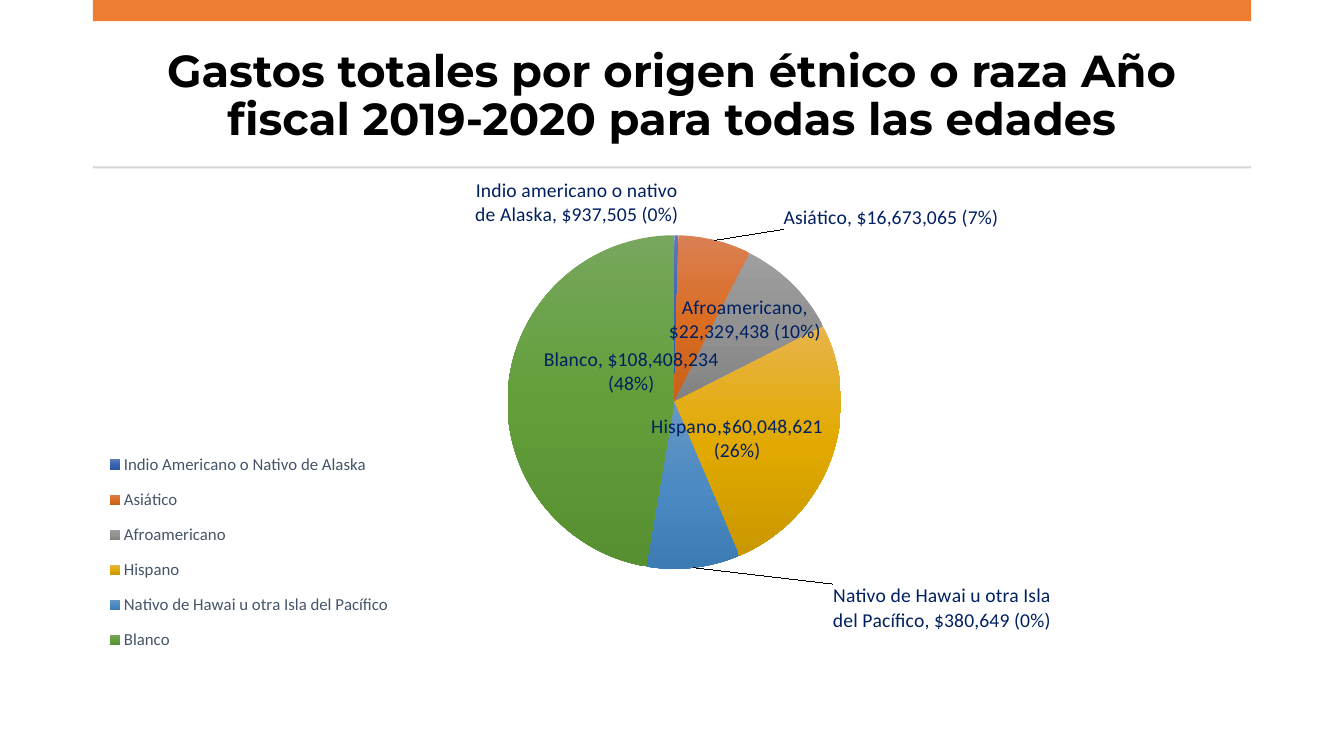
"""Build a slide with a pie chart of total spending by ethnicity or race."""
from dataclasses import dataclass

from pptx import Presentation
from pptx import util as u
from pptx.chart.data import CategoryChartData
from pptx.dml.color import RGBColor
from pptx.enum import chart as charts, shapes, text
from pptx.oxml import parse_xml
from pptx.oxml.ns import nsdecls

BLACK = RGBColor(0x00, 0x00, 0x00)
ORANGE = RGBColor(0xED, 0x7D, 0x31)
GREY = RGBColor(0xD5, 0xD5, 0xD5)
SLATE = RGBColor(0x44, 0x54, 0x6A)
NAVY = RGBColor(0x00, 0x20, 0x60)
LEFT, WIDTH = u.Inches(0.92), u.Inches(11.49)
TITLE = "Gastos totales por origen étnico o raza Año fiscal 2019-2020 para todas las edades"


@dataclass
class Bar:
    top: float
    height: float
    color: RGBColor


@dataclass
class Slice:
    category: str
    share: float
    label: str
    offset: tuple[float, float]
    gradient: tuple[str, str, str]


BARS = [Bar(0, 0.21, ORANGE), Bar(1.65, 0.02, GREY)]
SLICES = [
    Slice("Indio Americano o Nativo de Alaska", 0.4,
          "Indio americano o nativo\nde Alaska, $937,505 (0%)", (-0.086, -0.005),
          ("5B78B9", "3764B4", "2C57A5")),
    Slice("Asiático", 7, "Asiático, $16,673,065 (7%)", (0.058, -0.01),
          ("D98054", "DB6D23", "CA6018")),
    Slice("Afroamericano", 10, "Afroamericano,\n$22,329,438 (10%)", (-0.11, 0.122),
          ("9E9E9E", "929292", "828282")),
    Slice("Hispano", 26, "Hispano,$60,048,621\n(26%)", (-0.16, -0.09),
          ("E8B44B", "E2AA00", "C99700")),
    Slice("Nativo de Hawai u otra Isla del Pacífico", 9,
          "Nativo de Hawai u otra Isla\ndel Pacífico, $380,649 (0%)", (0.12, 0.02),
          ("6997C5", "4B8AC2", "3D7BB3")),
    Slice("Blanco", 47, "Blanco, $108,408,234\n(48%)", (0.187, -0.03),
          ("77A65D", "639E3A", "579030")),
]


def set_font(font, color: RGBColor, **values) -> None:
    for name, value in values.items():
        setattr(font, name, value)
    font.color.rgb = color


def manual_layout(x: float, y: float, size: tuple = (), inner: bool = False):
    parts = {"layoutTarget": "inner"} if inner else {}
    if size:
        parts |= {"xMode": "edge", "yMode": "edge"}
    parts |= {"x": x, "y": y} | dict(zip("wh", size))
    body = "".join(f'<c:{name} val="{value}"/>' for name, value in parts.items())
    return parse_xml(f'<c:layout {nsdecls("c")}><c:manualLayout>{body}</c:manualLayout></c:layout>')


def gradient_fill(colors: tuple[str, str, str]):
    stops = "".join(f'<a:gs pos="{index * 50000}"><a:srgbClr val="{color}"/></a:gs>'
                    for index, color in enumerate(colors))
    return parse_xml(f'<a:gradFill {nsdecls("a")} rotWithShape="1"><a:gsLst>{stops}</a:gsLst>'
                     '<a:lin ang="5400000" scaled="0"/></a:gradFill>')


def add_title(slide) -> None:
    title = slide.shapes.title
    title.left, title.top, title.width, title.height = LEFT, u.Inches(0.37), WIDTH, u.Inches(1.18)
    frame = title.text_frame
    frame.text = TITLE
    frame.word_wrap = True
    frame.vertical_anchor = text.MSO_ANCHOR.MIDDLE
    paragraph = frame.paragraphs[0]
    paragraph.alignment = text.PP_ALIGN.CENTER
    paragraph.line_spacing = 0.9
    set_font(paragraph.runs[0].font, BLACK, name="Montserrat", size=u.Pt(32), bold=True)


def add_bar(slide, bar: Bar) -> None:
    shape = slide.shapes.add_shape(shapes.MSO_SHAPE.RECTANGLE, LEFT, u.Inches(bar.top),
                                   WIDTH, u.Inches(bar.height))
    shape.shadow.inherit = False
    shape.fill.solid()
    shape.fill.fore_color.rgb = bar.color
    shape.line.fill.background()


def format_slice(point, piece: Slice) -> None:
    point.format.line.fill.background()
    point.format.fill.background()
    properties = point.format.fill._xPr
    properties.replace(properties[0], gradient_fill(piece.gradient))
    label = point.data_label
    label.text_frame.text = piece.label
    for paragraph in label.text_frame.paragraphs:
        set_font(paragraph.runs[0].font, NAVY, name="Calibri", size=u.Pt(14))
    label.position = charts.XL_LABEL_POSITION.OUTSIDE_END
    label._dLbl.insert(1, manual_layout(*piece.offset))


def add_pie(slide) -> None:
    data = CategoryChartData()
    data.categories = [piece.category for piece in SLICES]
    data.add_series("Series 1", [piece.share for piece in SLICES])
    chart = slide.shapes.add_chart(charts.XL_CHART_TYPE.PIE, LEFT, u.Inches(1.65), WIDTH,
                                   u.Inches(5.21), data).chart
    set_font(chart.font, BLACK, name="Calibri", size=u.Pt(10))
    chart.has_title = False
    chart.has_legend = True
    legend = chart.legend
    legend.position = charts.XL_LEGEND_POSITION.BOTTOM
    legend.include_in_layout = False
    set_font(legend.font, SLATE, name="Calibri", size=u.Pt(12))
    legend._element.find("{*}legendPos").addnext(manual_layout(0.01, 0.52, (0.25, 0.43)))
    plot = chart.plots[0]
    plot.vary_by_categories = True
    for index, piece in enumerate(SLICES):
        format_slice(plot.series[0].points[index], piece)
    area = chart._chartSpace.chart.plotArea
    for layout in area.findall("{*}layout"):
        area.remove(layout)
    area.insert(0, manual_layout(0.358, 0.131, (0.288, 0.636), inner=True))


def main() -> None:
    presentation = Presentation()
    presentation.slide_width, presentation.slide_height = u.Inches(13.33), u.Inches(7.5)
    slide = presentation.slides.add_slide(presentation.slide_layouts[5])
    add_title(slide)
    for bar in BARS:
        add_bar(slide, bar)
    add_pie(slide)
    presentation.save("out.pptx")


if __name__ == "__main__":
    main()
